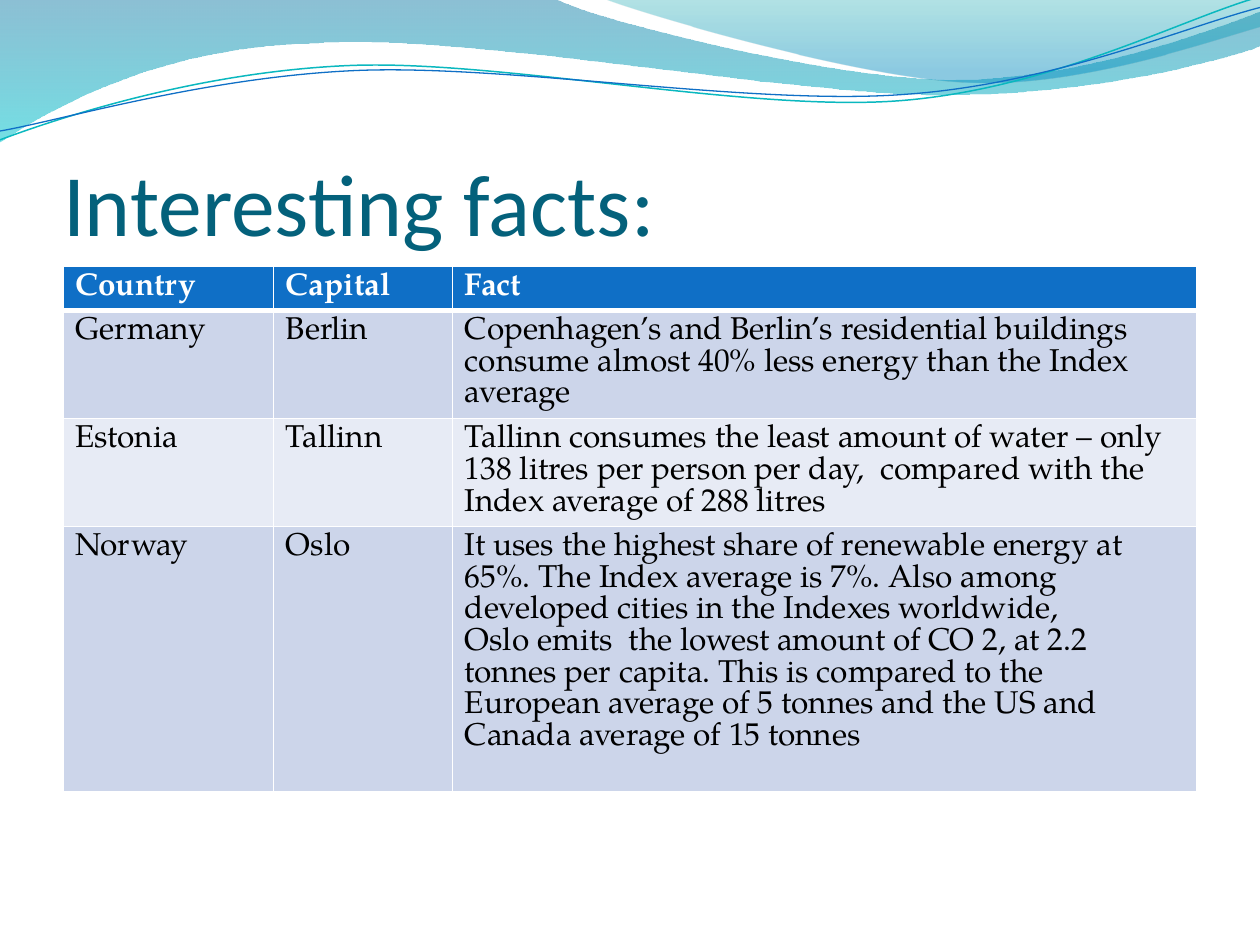
import math

from lxml import etree
from pptx import Presentation
from pptx import util as u
from pptx.dml.color import RGBColor
from pptx.enum import text
from pptx.oxml.ns import qn

WHITE, BLACK = RGBColor(255, 255, 255), RGBColor(0, 0, 0)
BLUE = RGBColor(0x0F, 0x6F, 0xC6)
TEAL = RGBColor(0x0A, 0xB8, 0xBF)
TITLE_COLOR = RGBColor(0x04, 0x61, 0x7B)
BANDS = [RGBColor(0xCC, 0xD5, 0xEA), RGBColor(0xE7, 0xEB, 0xF5)]

TITLE = "Interesting facts:"
FACTS = [
    ("Country", "Capital", "Fact"),
    ("Germany", "Berlin",
     "Copenhagen’s and Berlin’s residential buildings consume almost 40% less "
     "energy than the Index average"),
    ("Estonia", "Tallinn",
     "Tallinn consumes the least amount of water – only 138 litres per person "
     "per day,  compared with the Index average of 288 litres"),
    ("Norway", "Oslo",
     "It uses the highest share of renewable energy at 65%. The Index average "
     "is 7%. Also among developed cities in the Indexes worldwide,\n"
     "Oslo emits  the lowest amount of CO 2, at 2.2 tonnes per capita. This is "
     "compared to the European average of 5 tonnes and the US and Canada "
     "average of 15 tonnes"),
]
COLUMN_WIDTHS = [1.67, 1.42, 5.91]
ROW_HEIGHTS = [0.34, 0.86, 0.85, 2.11]

# Outlines in inches: a pair is a line end, six numbers are a Bézier curve.
# Gradient stops: colour, position, opacity in percent.
BANNERS = [
    ([(0, 0), (4.4, -0.01), (4.76, 0.17, 6.64, 0.63, 7.58, 0.63),
      (8.53, 0.63, 9.58, 0.26, 10, 0.09), (10.01, 0.36),
      (9.83, 0.44, 8.7, 0.76, 7.46, 0.75), (6.22, 0.75, 3.82, 0.28, 2.57, 0.34),
      (1.29, 0.36, 0.46, 0.83, -0.01, 1.13), (0, 0)],
     [(RGBColor(0, 0x74, 0xA1), 0, 45), (RGBColor(0, 0xC6, 0xCF), 1, 55)]),
    ([(4.79, -0.01), (5.09, 0.11, 6.82, 0.62, 7.69, 0.65),
      (8.56, 0.69, 9.61, 0.32, 10, 0.21), (10, 0), (4.79, -0.01)],
     [(RGBColor(0, 0xA1, 0xA9), 0, 30), (RGBColor(0, 0x8B, 0xBF), 0.8, 45)]),
]
# Each wave: outline, centre of its tilt, colour, line width.
WAVES = [
    ([(0, 1.11), (0.48, 0.93, 1.58, 0.57, 2.77, 0.52),
      (3.95, 0.47, 5.93, 0.89, 7.13, 0.8), (8.33, 0.71, 9.38, 0.15, 9.98, -0.02)],
     (4.99, 0.58), TEAL, 0.85),
    ([(0, 1.04), (0.47, 0.96, 1.64, 0.61, 2.83, 0.56),
      (4.03, 0.51, 5.97, 0.84, 7.17, 0.75), (8.36, 0.67, 9.41, 0.21, 10, 0.06)],
     (5, 0.59), BLUE, 0.75),
]
WAVE_TILT = -2.7


def level(step, center):
    """Turn the points of one step back by the tilt of the waves."""
    angle = math.radians(-WAVE_TILT)
    sine, cosine = math.sin(angle), math.cos(angle)
    turned = []
    for x, y in zip(step[::2], step[1::2]):
        dx, dy = x - center[0], y - center[1]
        turned += [center[0] + dx * cosine - dy * sine,
                   center[1] + dx * sine + dy * cosine]
    return turned


def add_outline(slide, outline, close):
    """Draw every point as a line end, then join triples into Bézier curves."""
    points = [(u.Inches(x), u.Inches(y)) for step in outline
              for x, y in zip(step[::2], step[1::2])]
    builder = slide.shapes.build_freeform(*points[0], scale=1.0)
    builder.add_line_segments(points[1:], close=close)
    shape = builder.convert_to_shape()
    shape.shadow.inherit = False
    ends = list(shape._element.iter(qn("a:lnTo")))
    for step in outline[1:]:
        first, ends = ends[0], ends[1:]
        if len(step) == 6:
            first.tag = qn("a:cubicBezTo")
            for end in ends[:2]:
                first.append(end[0])
                end.getparent().remove(end)
            ends = ends[2:]
    return shape


def add_banner(slide, outline, stops):
    banner = add_outline(slide, outline, True)
    banner.line.fill.background()
    banner.fill.gradient()
    banner.fill.gradient_angle = 270
    for stop, (color, position, _) in zip(banner.fill.gradient_stops, stops):
        stop.color.rgb = color
        stop.position = position
    colors = banner._element.spPr.iter(qn("a:srgbClr"))
    for color, (_, _, opacity) in zip(colors, stops):
        etree.SubElement(color, qn("a:alpha"), val=str(opacity * 1000))


def add_wave(slide, outline, center, color, width):
    wave = add_outline(slide, [level(step, center) for step in outline], False)
    wave.rotation = WAVE_TILT
    wave.fill.background()
    wave.line.color.rgb = color
    wave.line.width = u.Pt(width)


def set_borders(cell, widths):
    properties = cell._tc.get_or_add_tcPr()
    for side, width in widths.items():
        line = etree.SubElement(properties, qn("a:ln" + side), w=str(u.Pt(width)))
        fill = etree.SubElement(line, qn("a:solidFill"))
        etree.SubElement(fill, qn("a:srgbClr"), val=str(WHITE))


def set_values(target, **values):
    for name, value in values.items():
        setattr(target, name, value)


def add_title(slide):
    title = slide.shapes.title
    title.left, title.top, title.width, title.height = map(u.Inches, (0.5, 0.77, 9, 1.25))
    frame = title.text_frame
    frame.text = TITLE
    set_values(frame, margin_left=0, margin_right=0, margin_bottom=0,
               margin_top=u.Inches(0.05), word_wrap=True,
               vertical_anchor=text.MSO_ANCHOR.BOTTOM)
    paragraph = frame.paragraphs[0]
    paragraph.alignment = text.PP_ALIGN.LEFT
    font = paragraph.runs[0].font
    set_values(font, name="Calibri", size=u.Pt(50))
    font.color.rgb = TITLE_COLOR


def add_facts(slide):
    table = slide.shapes.add_table(
        len(FACTS), len(COLUMN_WIDTHS), u.Inches(0.5), u.Inches(2.11),
        u.Inches(sum(COLUMN_WIDTHS)), u.Inches(sum(ROW_HEIGHTS))).table
    for column, width in zip(table.columns, COLUMN_WIDTHS):
        column.width = u.Inches(width)
    for r, (row, height, facts) in enumerate(zip(table.rows, ROW_HEIGHTS, FACTS)):
        row.height = u.Inches(height)
        header = r == 0
        for cell, fact in zip(row.cells, facts):
            cell.text = fact
            set_borders(cell, {"L": 1, "R": 1, "T": 1, "B": 3 if header else 1})
            cell.fill.solid()
            cell.fill.fore_color.rgb = BLUE if header else BANDS[(r - 1) % 2]
            for paragraph in cell.text_frame.paragraphs:
                paragraph.line_spacing = u.Pt(18.1)
                font = paragraph.runs[0].font
                set_values(font, name="TeX Gyre Pagella", size=u.Pt(18), bold=header)
                font.color.rgb = WHITE if header else BLACK


def main():
    deck = Presentation()
    deck.slide_width, deck.slide_height = u.Inches(10), u.Inches(7.5)
    slide = deck.slides.add_slide(deck.slide_layouts[5])
    for banner in BANNERS:
        add_banner(slide, *banner)
    for wave in WAVES:
        add_wave(slide, *wave)
    add_title(slide)
    add_facts(slide)
    deck.save("out.pptx")


if __name__ == "__main__":
    main()
